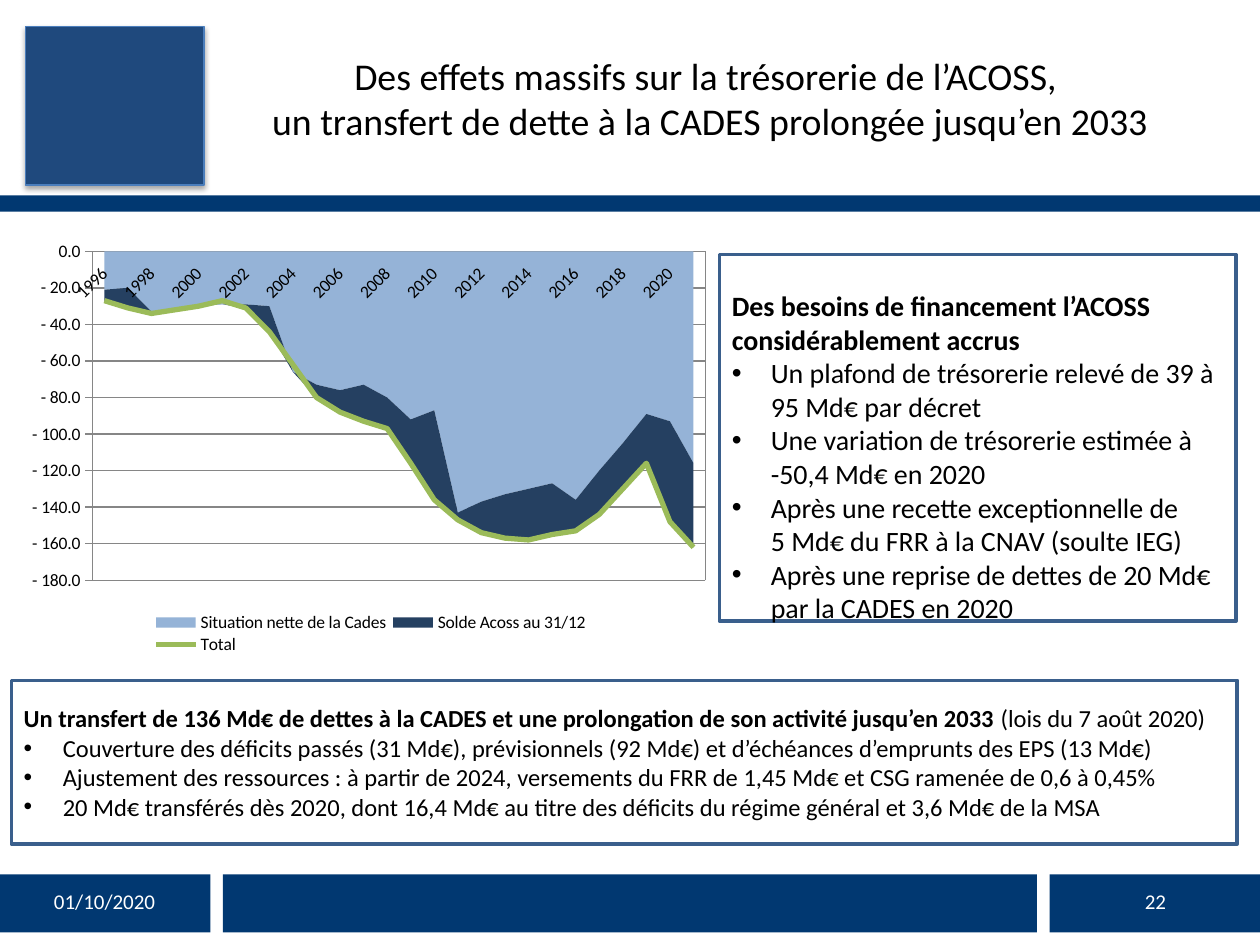
from copy import deepcopy
from typing import NamedTuple

from lxml.etree import SubElement
from pptx import Presentation
from pptx.chart.data import CategoryChartData
from pptx.dml.color import RGBColor
from pptx.enum.chart import XL_CHART_TYPE, XL_LEGEND_POSITION, XL_TICK_MARK
from pptx.enum.shapes import MSO_SHAPE
from pptx.enum.text import MSO_ANCHOR, PP_ALIGN
from pptx.oxml import parse_xml
from pptx.oxml.ns import nsdecls, qn
from pptx.util import Inches, Pt

FONT = "Calibri"
NAVY, FRAME, GRID = "013871", "3A5F8C", "868686"
LEFT_AXIS_MIN = -180


class Box(NamedTuple):
    left: float
    top: float
    width: float
    height: float

    def lengths(self):
        return [Inches(value) for value in self]


class Para(NamedTuple):
    """Lead text is bold; a newline in the body is a line break."""
    lead: str = ""
    body: str = ""
    bullet: bool = False


class Series(NamedTuple):
    name: str
    color: str
    values: list


BARS = [Box(0, 1.55, 10, 0.13), Box(0, 6.94, 1.67, 0.46),
        Box(1.77, 6.94, 6.46, 0.46), Box(8.33, 6.94, 1.67, 0.46)]

FINANCING = [
    Para(lead="Des besoins de financement l’ACOSS considérablement accrus"),
    Para(body="Un plafond de trésorerie relevé de 39 à 95 Md€ par décret", bullet=True),
    Para(body="Une variation de trésorerie estimée à \n-50,4 Md€ en 2020", bullet=True),
    Para(body="Après une recette exceptionnelle de \n5 Md€ du FRR à la CNAV (soulte IEG)", bullet=True),
    Para(body="Après une reprise de dettes de 20 Md€ par la CADES en 2020", bullet=True),
]
TRANSFER = [
    Para("Un transfert de 136 Md€ de dettes à la CADES et une prolongation de son activité jusqu’en 2033 ",
         "(lois du 7 août 2020)"),
    Para(body="Couverture des déficits passés (31 Md€), prévisionnels (92 Md€) et d’échéances "
              "d’emprunts des EPS (13 Md€)", bullet=True),
    Para(body="Ajustement des ressources : à partir de 2024, versements du FRR de 1,45 Md€ et CSG "
              "ramenée de 0,6 à 0,45%", bullet=True),
    Para(body="20 Md€ transférés dès 2020, dont 16,4 Md€ au titre des déficits du régime général "
              "et 3,6 Md€ de la MSA", bullet=True),
]

DEBT = [
    Series("Situation nette de la Cades", "95B3D7",
           [-21, -20, -33, -32, -30, -29, -29, -30, -66, -73, -76, -73, -80, -92, -87, -143, -137,
            -133, -130, -127, -136, -120, -105, -89, -93, -116]),
    Series("Solde Acoss au 31/12", "254061",
           [-6, -11, -1, 0, 0, 0, -2, -14, 0, -7, -12, -20, -17, -24, -49, -4, -17, -24, -28, -28,
            -17, -24, -25, -27, -54, -46]),
    Series("Total", "9BBB59",
           [-27, -31, -34, -32, -30, -27, -31, -44, -62, -80, -88, -93, -97, -116, -136, -147, -154,
            -157, -158, -155, -153, -144, -130, -116, -148, -162]),
]


def rgb(color: str) -> RGBColor:
    return RGBColor.from_string(color)


def add_rect(slide, box: Box, fill: str, line: str = "", width: float = 2):
    rect = slide.shapes.add_shape(MSO_SHAPE.RECTANGLE, *box.lengths())
    rect.shadow.inherit = False
    rect.fill.solid()
    rect.fill.fore_color.rgb = rgb(fill)
    if line:
        rect.line.color.rgb = rgb(line)
        rect.line.width = Pt(width)
    else:
        rect.line.fill.background()
    return rect


def add_bullet(paragraph) -> None:
    props = paragraph._p.get_or_add_pPr()
    props.set("marL", str(Inches(0.31)))
    props.set("indent", str(-Inches(0.31)))
    SubElement(props, qn("a:buFont")).set("typeface", "Arial")
    SubElement(props, qn("a:buChar")).set("char", "•")


def write(shape, paras: list[Para], *, size: float, color: str = "000000", align=PP_ALIGN.LEFT,
          anchor=MSO_ANCHOR.MIDDLE, top_inset: float = 0.05) -> None:
    frame = shape.text_frame
    frame.word_wrap = True
    frame.vertical_anchor = anchor
    frame.margin_top = Inches(top_inset)
    for index, para in enumerate(paras):
        paragraph = frame.paragraphs[0] if index == 0 else frame.add_paragraph()
        paragraph.alignment = align
        if para.bullet:
            add_bullet(paragraph)
        for text, bold in ((para.lead, True), (para.body, False)):
            for row, words in enumerate(text.split("\n") if text else []):
                if row:
                    paragraph.add_line_break()
                run = paragraph.add_run()
                run.text = words
                run.font.name, run.font.size, run.font.bold = FONT, Pt(size), bold
                run.font.color.rgb = rgb(color)


def add_label(slide, box: Box, text: str, size: float, color: str) -> None:
    label = slide.shapes.add_textbox(*box.lengths())
    write(label, [Para(body=text)], size=size, color=color, align=PP_ALIGN.CENTER)


def add_soft_shadow(shape) -> None:
    effects = shape._element.spPr.find(qn("a:effectLst"))
    effects.append(parse_xml(
        f'<a:outerShdw {nsdecls("a")} blurRad="{Pt(3.1)}" dist="{Pt(1.8)}" dir="5400000" '
        'rotWithShape="0"><a:srgbClr val="000000"><a:alpha val="35000"/></a:srgbClr></a:outerShdw>'))


def manual_layout(box: Box, inner: bool = False):
    """Layout in fractions of the chart's size."""
    target = '<c:layoutTarget val="inner"/>' if inner else ""
    x, y, w, h = box
    return parse_xml(
        f'<c:layout {nsdecls("c")}><c:manualLayout>{target}<c:xMode val="edge"/><c:yMode val="edge"/>'
        f'<c:x val="{x}"/><c:y val="{y}"/><c:w val="{w}"/><c:h val="{h}"/></c:manualLayout></c:layout>')


def move_total_to_right_axis(chart) -> None:
    """Turns the last area series into a line on a second pair of axes."""
    plot_area = chart._chartSpace.chart.plotArea
    areas = plot_area.find(qn("c:areaChart"))
    total = areas.findall(qn("c:ser"))[-1]
    line_chart = parse_xml(
        f'<c:lineChart {nsdecls("c")}><c:grouping val="standard"/><c:varyColors val="0"/>'
        '<c:marker val="1"/><c:axId val="5001"/><c:axId val="5002"/></c:lineChart>')
    line_chart.insert(2, total)
    total.find(qn("c:spPr")).addnext(parse_xml(
        f'<c:marker {nsdecls("c")}><c:symbol val="none"/></c:marker>'))
    SubElement(total, qn("c:smooth")).set("val", "0")
    areas.addnext(line_chart)
    value_axis = plot_area.find(qn("c:valAx"))
    outline = deepcopy(value_axis.find(qn("c:spPr")))
    right_axes = [parse_xml(
        f'<c:{kind} {nsdecls("c")}><c:axId val="{own}"/><c:scaling><c:orientation val="minMax"/>{limits}'
        f'</c:scaling><c:delete val="{hidden}"/><c:axPos val="{side}"/><c:majorTickMark val="none"/>'
        f'<c:minorTickMark val="none"/><c:tickLblPos val="none"/><c:crossAx val="{other}"/>'
        f'<c:crosses val="{crosses}"/></c:{kind}>')
        for kind, own, other, limits, hidden, side, crosses in (
            ("valAx", 5002, 5001, f'<c:max val="0"/><c:min val="{LEFT_AXIS_MIN}"/>', 0, "r", "max"),
            ("catAx", 5001, 5002, "", 1, "b", "autoZero"))]
    right_axes[0].find(qn("c:tickLblPos")).addnext(outline)
    SubElement(right_axes[0], qn("c:crossBetween")).set("val", "between")
    for axis in reversed(right_axes):
        value_axis.addnext(axis)


def add_debt_chart(slide, box: Box) -> None:
    data = CategoryChartData()
    data.categories = [str(year) for year in range(1996, 2022)]
    for series in DEBT:
        data.add_series(series.name, series.values)
    chart = slide.shapes.add_chart(XL_CHART_TYPE.AREA_STACKED, *box.lengths(), data).chart
    chart.has_title = False
    chart.font.name, chart.font.size = FONT, Pt(10)
    chart.font.color.rgb = rgb("000000")
    plot = chart.plots[0]
    plot.vary_by_categories = False
    *stacked, total = plot.series
    for drawn, series in zip(stacked, DEBT):
        drawn.format.fill.solid()
        drawn.format.fill.fore_color.rgb = rgb(series.color)
    total.format.line.color.rgb = rgb(DEBT[-1].color)
    total.format.line.width = Pt(3)

    years, amounts = chart.category_axis, chart.value_axis
    for axis in (years, amounts):
        axis.major_tick_mark = XL_TICK_MARK.OUTSIDE
        axis.minor_tick_mark = XL_TICK_MARK.NONE
        axis.format.line.color.rgb = rgb(GRID)
    years.has_major_gridlines = False
    years.tick_labels.font.size = Pt(10)
    years._element.find(qn("c:txPr")).find(qn("a:bodyPr")).set("rot", "-2700000")
    no_multi_level = years._element.find(qn("c:noMultiLvlLbl"))
    skip = parse_xml(f'<c:tickLblSkip {nsdecls("c")} val="2"/>')
    no_multi_level.addprevious(skip)
    amounts.minimum_scale, amounts.maximum_scale, amounts.major_unit = LEFT_AXIS_MIN, 0, 20
    amounts.has_major_gridlines = True
    amounts.major_gridlines.format.line.color.rgb = rgb(GRID)
    amounts.tick_labels.number_format = "#\\ ##0.0"
    amounts.tick_labels.number_format_is_linked = False
    between = amounts._element.find(qn("c:crossBetween"))
    if between is not None:
        between.set("val", "between")

    chart.has_legend = True
    chart.legend.position = XL_LEGEND_POSITION.BOTTOM
    chart.legend.include_in_layout = False
    legend = chart.legend._element
    plot_area = chart._chartSpace.chart.plotArea
    for part, layout in ((legend, manual_layout(Box(0.19, 0.88, 0.63, 0.11))),
                         (plot_area, manual_layout(Box(0.11, 0.04, 0.87, 0.77), inner=True))):
        for default in part.findall(qn("c:layout")):
            part.remove(default)
        part.insert(1 if part is legend else 0, layout)
    move_total_to_right_axis(chart)


def main() -> None:
    deck = Presentation()
    deck.slide_width, deck.slide_height = Inches(10), Inches(7.5)
    slide = deck.slides.add_slide(deck.slide_layouts[6])
    for bar in BARS:
        add_rect(slide, bar, NAVY)
    add_soft_shadow(add_rect(slide, Box(0.2, 0.21, 1.42, 1.26), "1F497D", "4B7EBC", 0.75))
    add_label(slide, Box(1.77, 0.15, 7.73, 1.25),
              "Des effets massifs sur la trésorerie de l’ACOSS, \n"
              "un transfert de dette à la CADES prolongée jusqu’en 2033", 21.6, "000000")
    add_label(slide, Box(0.12, 6.95, 1.42, 0.4), "01/10/2020", 12, "FFFFFF")
    add_label(slide, Box(8.46, 6.95, 1.42, 0.4), "22", 12, "FFFFFF")
    financing = add_rect(slide, Box(5.71, 2.02, 4.1, 2.91), "FFFFFF", FRAME)
    write(financing, FINANCING, size=16, anchor=MSO_ANCHOR.TOP, top_inset=0.27)
    transfer = add_rect(slide, Box(0.09, 5.4, 9.73, 1.3), "FFFFFF", FRAME)
    write(transfer, TRANSFER, size=14)
    add_debt_chart(slide, Box(0.12, 1.86, 5.59, 3.39))
    deck.save("out.pptx")


if __name__ == "__main__":
    main()
